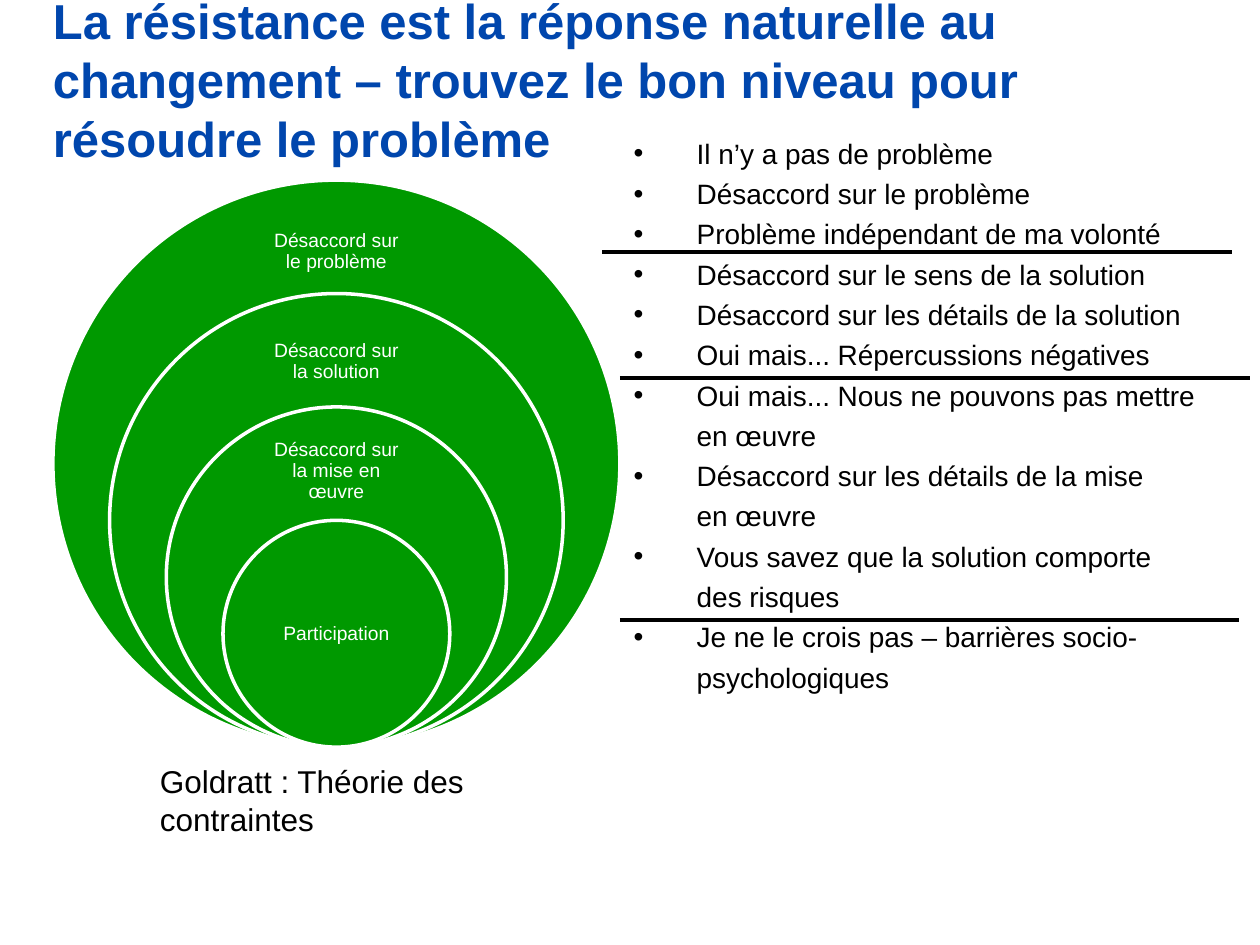
from lxml import etree
from pptx import Presentation
from pptx.dml.color import RGBColor
from pptx.enum.shapes import MSO_CONNECTOR, MSO_SHAPE
from pptx.enum.text import MSO_ANCHOR, MSO_AUTO_SIZE, PP_ALIGN
from pptx.oxml.ns import qn
from pptx.util import Inches, Pt

OVAL = MSO_SHAPE.OVAL
LINE = MSO_CONNECTOR.STRAIGHT
MIDDLE = MSO_ANCHOR.MIDDLE
TOP = MSO_ANCHOR.TOP
FIXED = MSO_AUTO_SIZE.NONE
LEFT = PP_ALIGN.LEFT
CENTER = PP_ALIGN.CENTER

TITLE = ("La résistance est la réponse naturelle au changement – "
         "trouvez le bon niveau pour résoudre le problème")
CAPTION = "Goldratt : Théorie des contraintes"
LEVELS = [
    ("Désaccord sur le problème", 0.68, 1 / 3),
    ("Désaccord sur la solution", 0.65, 1 / 3),
    ("Désaccord sur la mise en œuvre", 0.61, 1 / 3),
    ("Participation", 0.9, 1 / 2),
]
POINTS = [
    "Il n’y a pas de problème",
    "Désaccord sur le problème",
    "Problème indépendant de ma volonté",
    "Désaccord sur le sens de la solution",
    "Désaccord sur les détails de la solution",
    "Oui mais... Répercussions négatives",
    "Oui mais... Nous ne pouvons pas mettre en œuvre",
    "Désaccord sur les détails de la mise \ven œuvre",
    "Vous savez que la solution comporte des risques",
    "Je ne le crois pas – barrières socio-psychologiques",
]
RULES = [(4.78, 2, 5), (4.92, 3, 5), (4.92, 4.92, 4.91)]


def color(code):
    """Turn a hex string into a colour."""
    return RGBColor.from_string(code)


def inches(box):
    """Turn a box of numbers into lengths."""
    return [Inches(n) for n in box]


def apply(item, values):
    """Set each attribute named in a dict."""
    for name, value in values.items():
        setattr(item, name, value)


def set_frame(frame, pad, anchor=TOP):
    """Set wrapping, anchor and equal side margins of a text frame."""
    apply(frame, {"word_wrap": True, "auto_size": FIXED,
                  "vertical_anchor": anchor})
    for side in ("left", "right", "top", "bottom"):
        setattr(frame, f"margin_{side}", Inches(pad))


def set_text(para, text, size, code="000000", bold=False, align=LEFT,
             space=1.0):
    """Write a paragraph and format it."""
    para.text = text
    apply(para, {"alignment": align, "line_spacing": space})
    apply(para.font, {"name": "Arial", "size": Pt(size), "bold": bold})
    para.font.color.rgb = color(code)


def add_bullet(para, indent):
    """Give a paragraph a hanging bullet."""
    props = para._p.get_or_add_pPr()
    props.set("marL", str(Inches(indent)))
    props.set("indent", str(-Inches(indent)))
    etree.SubElement(props, qn("a:buFont")).set("typeface", "Arial")
    etree.SubElement(props, qn("a:buChar")).set("char", "•")


def add_title(slide, box):
    """Place and format the title."""
    title = slide.shapes.title
    apply(title, dict(zip(("left", "top", "width", "height"), inches(box))))
    set_frame(title.text_frame, 0, MIDDLE)
    set_text(title.text_frame.paragraphs[0], TITLE, 28, "0046AD", True)


def add_rings(slide, box):
    """Draw nested circles that share their lowest point."""
    left, top, width, height = box
    group = slide.shapes.add_group_shape()
    mid, base = left + width / 2, top + height
    wide = 1.26
    for i, (text, tall, share) in enumerate(LEVELS):
        size = width * (1 - i / (len(LEVELS) + 1))
        ring = group.shapes.add_shape(
            OVAL, *inches((mid - size / 2, base - size, size, size)))
        ring.shadow.inherit = False
        ring.fill.solid()
        ring.fill.fore_color.rgb = color("009900")
        ring.line.color.rgb = color("FFFFFF")
        ring.line.width = Pt(2)
        label = group.shapes.add_textbox(*inches(
            (mid - wide / 2, base - size + tall * share, wide, tall)))
        set_frame(label.text_frame, 0.09, MIDDLE)
        set_text(label.text_frame.paragraphs[0], text, 11, "FFFFFF",
                 align=CENTER, space=0.9)


def add_points(slide, box):
    """Write the bulleted list of objections."""
    frame = slide.shapes.add_textbox(*inches(box)).text_frame
    set_frame(frame, 0)
    for i, text in enumerate(POINTS):
        para = frame.add_paragraph() if i else frame.paragraphs[0]
        add_bullet(para, 0.5)
        set_text(para, text, 16, space=1.2)


def add_rule(slide, left, top, width):
    """Draw a level line between groups of points."""
    rule = slide.shapes.add_connector(
        LINE, *inches((left, top, left + width, top)))
    rule.line.color.rgb = color("000000")
    rule.line.width = Pt(2.25)
    etree.SubElement(rule._element.spPr, qn("a:effectLst"))


def add_caption(slide, box):
    """Write the caption below the circles."""
    frame = slide.shapes.add_textbox(*inches(box)).text_frame
    set_frame(frame, 0.1)
    frame.margin_top = frame.margin_bottom = Inches(0.05)
    set_text(frame.paragraphs[0], CAPTION, 18)


def main():
    """Build and save the slide."""
    deck = Presentation()
    deck.slide_width, deck.slide_height = Inches(10), Inches(7.5)
    slide = deck.slides.add_slide(deck.slide_layouts[5])
    add_title(slide, (0.42, 0.25, 9.17, 0.75))
    add_rings(slide, (0.42, 1.43, 4.5, 4.5))
    add_points(slide, (5.03, 1.03, 4.5, 4.8))
    for rule in RULES:
        add_rule(slide, *rule)
    add_caption(slide, (1.17, 6, 3.65, 0.4))
    deck.save("out.pptx")


if __name__ == "__main__":
    main()
